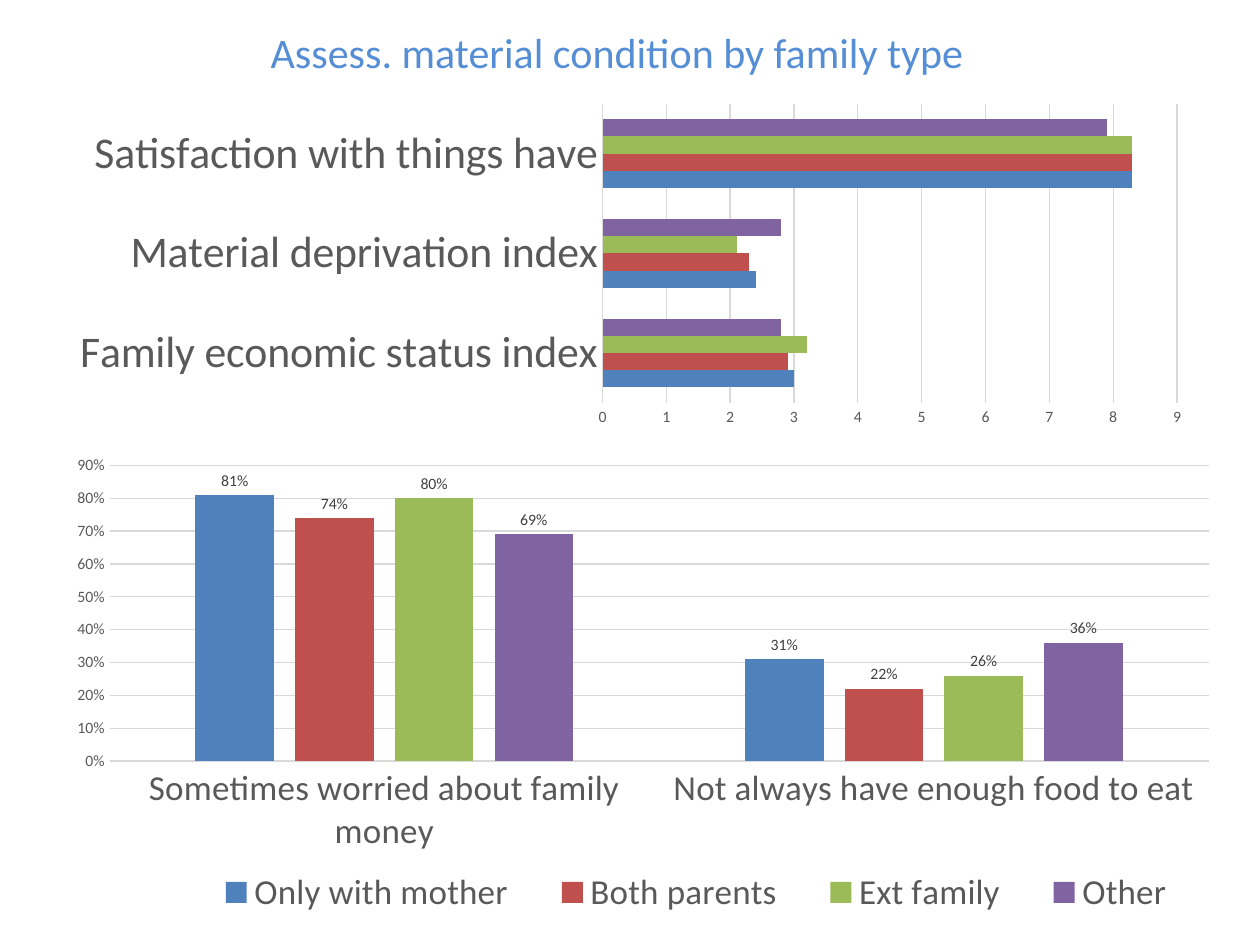
from dataclasses import dataclass

from lxml.etree import SubElement
from pptx import Presentation
from pptx.chart.data import CategoryChartData
from pptx.dml.color import RGBColor
from pptx.enum.chart import XL_CHART_TYPE, XL_LABEL_POSITION, XL_LEGEND_POSITION, XL_TICK_MARK
from pptx.enum.text import MSO_ANCHOR, PP_ALIGN
from pptx.oxml.ns import qn
from pptx.util import Inches, Pt


@dataclass(frozen=True)
class Theme:
    """Colours and type sizes of the slide."""
    font: str = "Calibri"
    title: str = "558ED5"
    text: str = "595959"
    label: str = "404040"
    grid: str = "D9D9D9"
    series: tuple = ("4F81BD", "C0504D", "9BBB59", "8064A2")
    title_size: int = 24
    index_size: int = 25
    category_size: int = 20
    small_size: int = 9


THEME = Theme()


def set_values(target, values):
    """Set every attribute named in a dict of format values."""
    for name, value in values.items():
        setattr(target, name, value)


def format_font(font, size, color):
    """Apply the theme typeface with a size and colour."""
    set_values(font, {"name": THEME.font, "size": Pt(size), "bold": False})
    font.color.rgb = RGBColor.from_string(color)


def format_line(line):
    """Draw a line in the thin grid style."""
    line.color.rgb = RGBColor.from_string(THEME.grid)
    line.width = Pt(0.75)


def place_part(part, position, index, inner=False):
    """Give a chart part a manual layout in fractions of the chart."""
    for layout in part.findall(qn("c:layout")):
        part.remove(layout)
    layout = SubElement(part, qn("c:layout"))
    part.insert(index, layout)
    manual = SubElement(layout, qn("c:manualLayout"))
    values = {"layoutTarget": "inner"} if inner else {}
    values.update(xMode="edge", yMode="edge", **dict(zip("xywh", position)))
    for name, value in values.items():
        SubElement(manual, qn(f"c:{name}")).set("val", str(value))


def add_title(slide, text):
    """Add the centred slide heading."""
    shape = slide.shapes.add_textbox(Inches(-0.03), Inches(0.13), Inches(9.93), Inches(0.53))
    frame = shape.text_frame
    set_values(frame, {"word_wrap": True, "vertical_anchor": MSO_ANCHOR.BOTTOM})
    paragraph = frame.paragraphs[0]
    set_values(paragraph, {"text": text, "alignment": PP_ALIGN.CENTER})
    format_font(paragraph.runs[0].font, THEME.title_size, THEME.title)


def format_axes(chart, category_size, maximum, step, number_format):
    """Style the category axis and the value axis."""
    ticks = {"major_tick_mark": XL_TICK_MARK.NONE, "minor_tick_mark": XL_TICK_MARK.NONE}
    category, value = chart.category_axis, chart.value_axis
    for axis, size in ((category, category_size), (value, THEME.small_size)):
        set_values(axis, ticks)
        format_font(axis.tick_labels.font, size, THEME.text)
    format_line(category.format.line)
    scale = {"minimum_scale": 0, "maximum_scale": maximum, "major_unit": step,
             "has_major_gridlines": True}
    set_values(value, scale)
    set_values(value.tick_labels, {"number_format": number_format,
                                   "number_format_is_linked": False})
    value.format.line.fill.background()
    format_line(value.major_gridlines.format.line)


def add_bars(slide, kind, box, categories, series, gap, overlap, plot_position):
    """Add a clustered chart with one theme colour per series."""
    data = CategoryChartData()
    data.categories = categories
    for name, values in series.items():
        data.add_series(name, values)
    chart = slide.shapes.add_chart(kind, *map(Inches, box), data).chart
    set_values(chart, {"has_title": False, "has_legend": False})
    format_font(chart.font, 10, "000000")
    plot = chart.plots[0]
    set_values(plot, {"gap_width": gap, "overlap": overlap, "vary_by_categories": False})
    for item, color in zip(plot.series, THEME.series):
        item.format.fill.solid()
        item.format.fill.fore_color.rgb = RGBColor.from_string(color)
    place_part(chart.element.find(".//" + qn("c:plotArea")), plot_position, 0, inner=True)
    return chart


def add_percent_labels(chart):
    """Show each value as a percentage above its column."""
    for item in chart.plots[0].series:
        labels = item.data_labels
        set_values(labels, {"show_value": True, "number_format": "0%",
                            "number_format_is_linked": False,
                            "position": XL_LABEL_POSITION.OUTSIDE_END})
        format_font(labels.font, THEME.small_size, THEME.label)


def add_legend(chart, position):
    """Add the family type legend below the columns."""
    chart.has_legend = True
    set_values(chart.legend, {"position": XL_LEGEND_POSITION.BOTTOM, "include_in_layout": False})
    format_font(chart.legend.font, THEME.category_size, THEME.text)
    place_part(chart.element.find(".//" + qn("c:legend")), position, 1)


def main():
    """Build and save the slide."""
    presentation = Presentation()
    set_values(presentation, {"slide_width": Inches(10), "slide_height": Inches(7.5)})
    slide = presentation.slides.add_slide(presentation.slide_layouts[6])
    add_title(slide, "Assess. material condition by family type ")

    index_chart = add_bars(
        slide, XL_CHART_TYPE.BAR_CLUSTERED, (0.45, 0.77, 9.12, 2.67),
        ["Family economic status index", "Material deprivation index",
         "Satisfaction with things have"],
        {"Series 1": (3, 2.4, 8.3), "Series 2": (2.9, 2.3, 8.3),
         "Series 3": (3.2, 2.1, 8.3), "Series 4": (2.8, 2.8, 7.9)},
        182, 0, (0.475, 0.02, 0.5, 0.89))
    format_axes(index_chart, THEME.index_size, 9, 1, "General")

    share_chart = add_bars(
        slide, XL_CHART_TYPE.COLUMN_CLUSTERED, (0.43, 3.54, 9.35, 3.83),
        ["Sometimes worried about family money", "Not always have enough food to eat"],
        {"Only with mother": (0.81, 0.31), "Both parents": (0.74, 0.22),
         "Ext family": (0.8, 0.26), "Other": (0.69, 0.36)},
        219, -27, (0.047, 0.04, 0.933, 0.613))
    format_axes(share_chart, THEME.category_size, 0.9, 0.1, "0%")
    add_percent_labels(share_chart)
    add_legend(share_chart, (0.11, 0.87, 0.87, 0.11))
    presentation.save("out.pptx")


if __name__ == "__main__":
    main()
